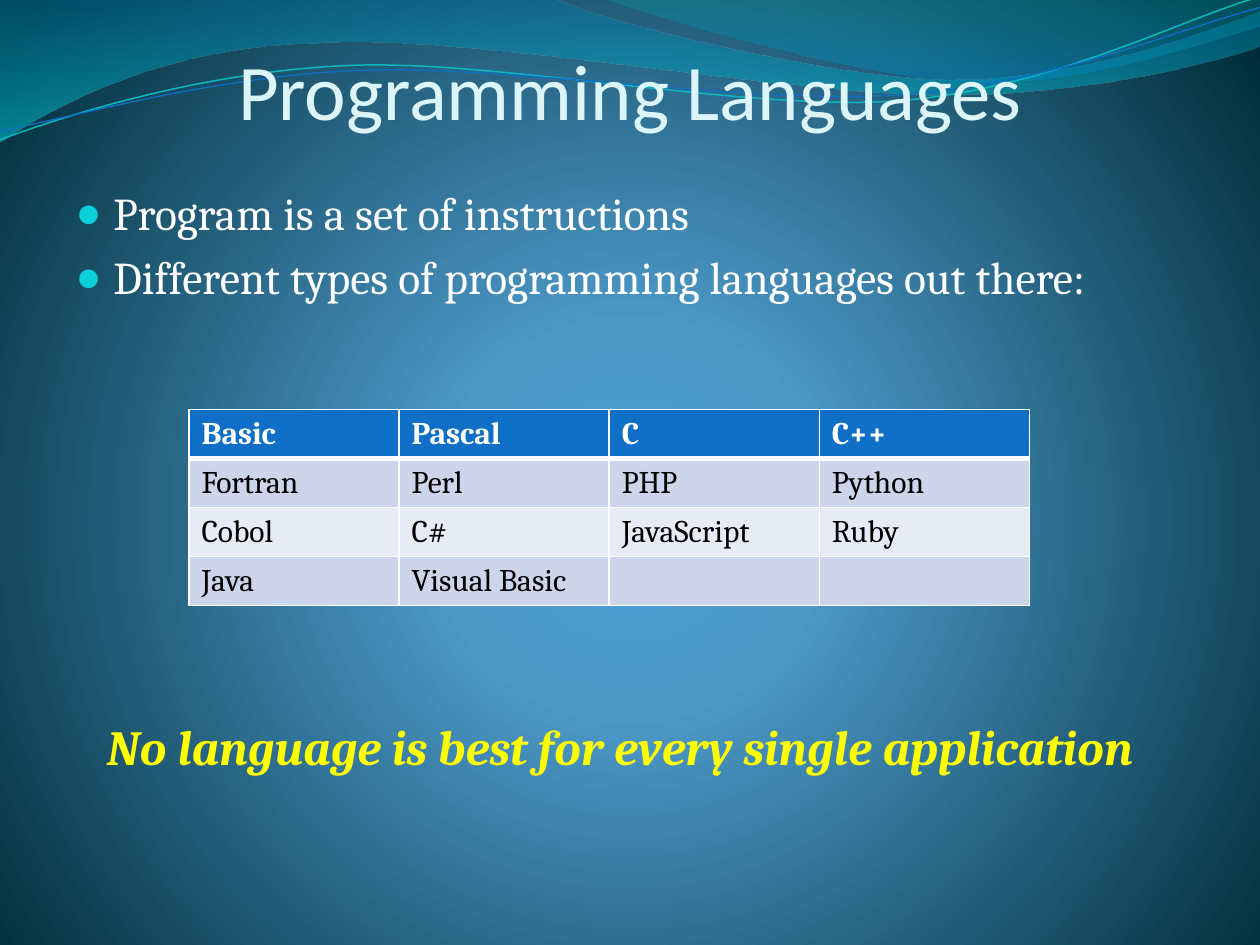
"""Build a slide that lists programming languages in a table over a wavy blue background."""
from itertools import product

from pptx import Presentation
from pptx.dml.color import RGBColor
from pptx.enum.text import MSO_ANCHOR, MSO_AUTO_SIZE, PP_ALIGN
from pptx.oxml import parse_xml
from pptx.oxml.ns import nsdecls, qn
from pptx.util import Inches, Pt

CENTER, LEFT = PP_ALIGN.CENTER, PP_ALIGN.LEFT
BOTTOM, TOP = MSO_ANCHOR.BOTTOM, MSO_ANCHOR.TOP
NO_FIT, GROW = MSO_AUTO_SIZE.NONE, MSO_AUTO_SIZE.SHAPE_TO_FIT_TEXT

THEME = {
    "heading_font": "Calibri", "body_font": "Cambria",
    "title_size": 45, "body_size": 26, "cell_size": 18, "tagline_size": 28,
    "title": "DBF5F9", "white": "FFFFFF", "black": "000000", "tagline": "FFFF00",
    "bullet": "0BD0D9", "header": "0F6FC6", "bands": ("E7EBF5", "CCD5EA"),
    "background": [(0, "4AA0D6", 100), (25, "4C98C7", 100), (100, "002C38", 100)],
    "left_wave": [(0, "0074A1", 45), (100, "00C6CF", 55)],
    "right_wave": [(0, "00A1A9", 30), (80, "008BBF", 45)],
    "teal_line": "0AB8BF", "blue_line": "0F6FC6",
}
RADIAL = '<a:path path="circle"><a:fillToRect l="10000" t="110000" r="10000" b="100000"/></a:path>'
DOWNWARD = '<a:lin ang="5400000" scaled="0"/>'


def write_text(paragraph, text, *, size, color, font=THEME["body_font"], bold=False, italic=False, align=LEFT):
    paragraph.alignment = align
    run = paragraph.add_run()
    run.text = text
    run.font.name, run.font.size = font, Pt(size)
    run.font.bold, run.font.italic = bold, italic
    run.font.color.rgb = RGBColor.from_string(color)


def paint_gradient(owner, fill, stops, direction):
    fill.gradient()
    gradient = owner.find(".//" + qn("a:gradFill"))
    stop_list = "".join(
        f'<a:gs pos="{position * 1000}"><a:srgbClr val="{color}"><a:alpha val="{opacity * 1000}"/></a:srgbClr></a:gs>'
        for position, color, opacity in stops)
    gradient.getparent().replace(gradient, parse_xml(
        f'<a:gradFill {nsdecls("a")} rotWithShape="1"><a:gsLst>{stop_list}</a:gsLst>{direction}</a:gradFill>'))


presentation = Presentation()
presentation.slide_width, presentation.slide_height = Inches(10), Inches(7.5)
column, row = presentation.slide_width / 20, presentation.slide_height / 30
slide = presentation.slides.add_slide(presentation.slide_layouts[1])
paint_gradient(slide.element, slide.background.fill, THEME["background"], RADIAL)

waves = [
    (THEME["left_wave"], None, (0, 0), [
        [(4.4, -0.01)],
        [(4.76, 0.17), (6.64, 0.63), (7.58, 0.63)], [(8.53, 0.63), (9.58, 0.26), (10, 0.09)],
        [(10.01, 0.36)],
        [(9.83, 0.44), (8.7, 0.76), (7.46, 0.75)], [(6.22, 0.75), (3.82, 0.28), (2.57, 0.34)],
        [(1.29, 0.36), (0.46, 0.83), (-0.01, 1.13)]]),
    (THEME["right_wave"], None, (4.79, -0.01), [
        [(5.09, 0.11), (6.82, 0.62), (7.69, 0.65)], [(8.56, 0.69), (9.61, 0.32), (10, 0.21)], [(10, 0)]]),
    (THEME["teal_line"], 0.85, (0, 1.11), [
        [(0.48, 0.93), (1.58, 0.57), (2.77, 0.52)], [(3.95, 0.47), (5.93, 0.89), (7.13, 0.8)],
        [(8.33, 0.71), (9.38, 0.15), (9.98, -0.02)]]),
    (THEME["blue_line"], 0.75, (0, 1.04), [
        [(0.47, 0.96), (1.64, 0.61), (2.83, 0.56)], [(4.03, 0.51), (5.97, 0.84), (7.17, 0.75)],
        [(8.36, 0.67), (9.41, 0.21), (10, 0.06)]]),
]
for paint, line_width, start, segments in waves:
    builder = slide.shapes.build_freeform(Inches(start[0]), Inches(start[1]))
    builder.add_line_segments([(Inches(x), Inches(y)) for segment in segments for x, y in segment],
                              close=line_width is None)
    wave = builder.convert_to_shape()
    wave.shadow.inherit = False
    line_nodes = iter(wave.element.findall(".//" + qn("a:lnTo")))
    for segment in segments:
        nodes = [next(line_nodes) for point in segment]
        if len(nodes) == 3:
            curve = parse_xml(f'<a:cubicBezTo {nsdecls("a")}/>')
            nodes[0].addprevious(curve)
            for node in nodes:
                curve.append(node[0])
                node.getparent().remove(node)
    if line_width is None:
        paint_gradient(wave.element, wave.fill, paint, DOWNWARD)
        wave.line.fill.background()
    else:
        wave.fill.background()
        wave.line.color.rgb = RGBColor.from_string(paint)
        wave.line.width = Pt(line_width)

title, body = slide.placeholders
for placeholder, top, height, anchor in ((title, 1, 3.33, BOTTOM), (body, 5.68, 22, TOP)):
    slide.shapes.element.append(placeholder.element)
    placeholder.left, placeholder.top = int(column), int(top * row)
    placeholder.width, placeholder.height = int(18 * column), int(height * row)
    placeholder.text_frame.vertical_anchor = anchor
    placeholder.text_frame.auto_size = NO_FIT
title.text_frame.margin_left = title.text_frame.margin_right = title.text_frame.margin_bottom = 0
write_text(title.text_frame.paragraphs[0], "Programming Languages", font=THEME["heading_font"],
           size=THEME["title_size"], color=THEME["title"], align=CENTER)

bullets = ["Program is a set of instructions", "Different types of programming languages out there:"]
for index, text in enumerate(bullets):
    paragraph = body.text_frame.add_paragraph() if index else body.text_frame.paragraphs[0]
    write_text(paragraph, text, size=THEME["body_size"], color=THEME["white"])
    properties = paragraph._p.get_or_add_pPr()
    properties.set("marL", str(Inches(0.3)))
    properties.set("indent", str(-Inches(0.3)))
    for mark in (f'<a:spcBef {nsdecls("a")}><a:spcPct val="20000"/></a:spcBef>',
                 f'<a:buClr {nsdecls("a")}><a:srgbClr val="{THEME["bullet"]}"/></a:buClr>',
                 f'<a:buSzPct {nsdecls("a")} val="95000"/>',
                 f'<a:buChar {nsdecls("a")} char="●"/>'):
        properties.append(parse_xml(mark))

languages = [
    ["Basic", "Pascal", "C", "C++"],
    ["Fortran", "Perl", "PHP", "Python"],
    ["Cobol", "C#", "JavaScript", "Ruby"],
    ["Java", "Visual Basic", "", ""],
]
table = slide.shapes.add_table(4, 4, int(3 * column), int(13 * row), int(13.34 * column), int(6.4 * row)).table
for table_row, height in zip(table.rows, (1.4, 1.4, 1.4, 1.52)):
    table_row.height = int(height * row)
for row_index, column_index in product(range(4), repeat=2):
    cell = table.cell(row_index, column_index)
    is_header = row_index == 0
    for side in "LRTB":
        thick = (is_header and side == "B") or (row_index == 1 and side == "T")
        cell._tc.get_or_add_tcPr().append(parse_xml(
            f'<a:ln{side} {nsdecls("a")} w="{Pt(3 if thick else 1)}"><a:solidFill>'
            f'<a:srgbClr val="{THEME["white"]}"/></a:solidFill></a:ln{side}>'))
    cell.fill.solid()
    cell.fill.fore_color.rgb = RGBColor.from_string(THEME["header"] if is_header else THEME["bands"][row_index % 2])
    write_text(cell.text_frame.paragraphs[0], languages[row_index][column_index], size=THEME["cell_size"],
               color=THEME["white" if is_header else "black"], bold=is_header)

tagline = slide.shapes.add_textbox(int(1.5 * column), int(22.54 * row), int(17.72 * column), int(2.28 * row))
tagline.text_frame.word_wrap = False
tagline.text_frame.auto_size = GROW
write_text(tagline.text_frame.paragraphs[0], "No language is best for every single application",
           size=THEME["tagline_size"], color=THEME["tagline"], bold=True, italic=True)

presentation.save("out.pptx")
